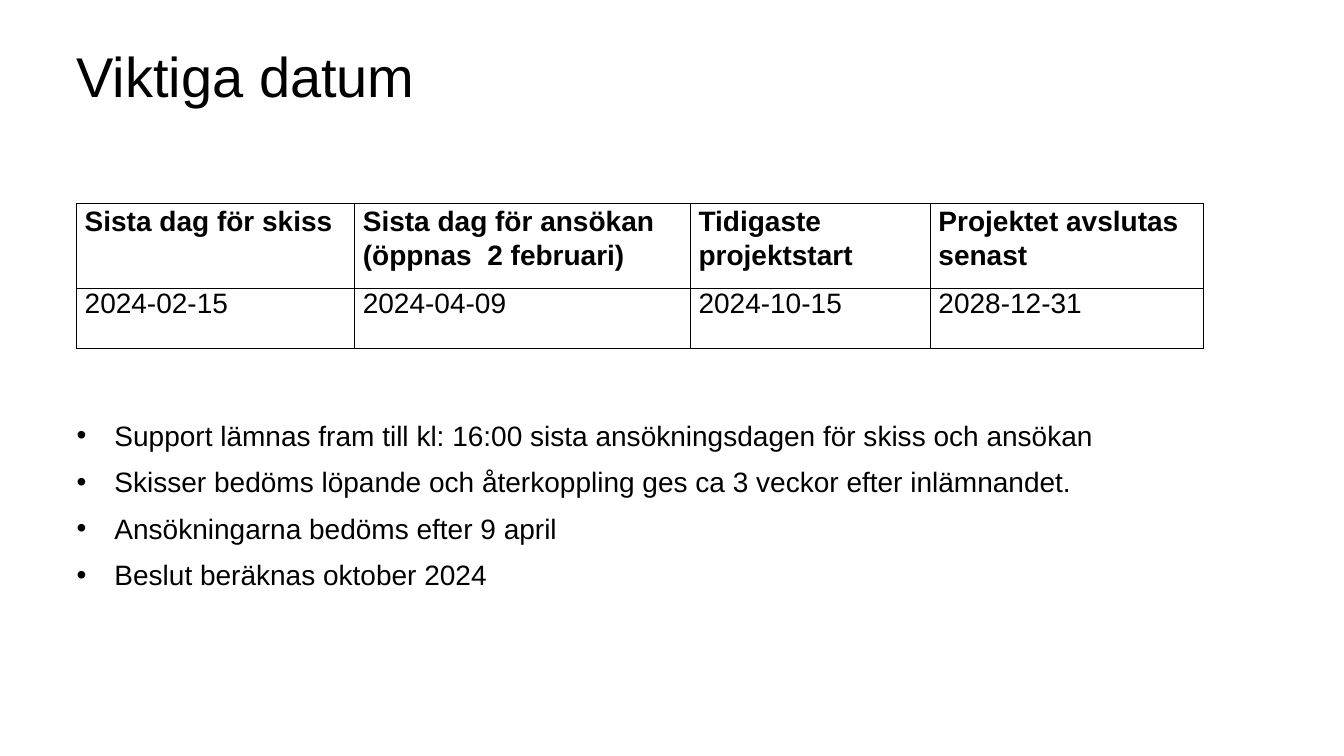
from lxml.etree import SubElement
from pptx import Presentation
from pptx.dml.color import RGBColor
from pptx.enum.text import MSO_ANCHOR, PP_ALIGN
from pptx.oxml.ns import qn
from pptx.util import Pt

TITLE = "Viktiga datum"
HEADERS = [
    "Sista dag för skiss",
    "Sista dag för ansökan\n(öppnas  2 februari)",
    "Tidigaste projektstart",
    "Projektet avslutas senast",
]
DATES = ["2024-02-15", "2024-04-09", "2024-10-15", "2028-12-31"]
BULLETS = [
    "Support lämnas fram till kl: 16:00 sista ansökningsdagen för skiss och ansökan",
    "Skisser bedöms löpande och återkoppling ges ca 3 veckor efter inlämnandet.",
    "Ansökningarna bedöms efter 9 april",
    "Beslut beräknas oktober 2024",
]

COLORS = {"text": "000000", "border": "000000", "background": "FFFFFF"}
FONT = "Arial"
LEFT, WIDTH = 54.7, 850.3
TITLE_TOP, TITLE_HEIGHT = 31.7, 90.7
TABLE_TOP = 145.4
COLUMN_WIDTHS = [198.7, 239.8, 171.4, 195.1]
ROW_HEIGHTS = [60.5, 43.2]
CELL_INDENT = 5.8
BULLETS_TOP, BULLETS_HEIGHT = 298.8, 153.4
BULLET_INDENT = 27


def set_font(paragraph, size, bold=False):
    paragraph.font.name = FONT
    paragraph.font.size = Pt(size)
    paragraph.font.bold = bold
    paragraph.font.color.rgb = RGBColor.from_string(COLORS["text"])


def prepare_frame(frame):
    """Wrap text from the top edge with no inner margins."""
    frame.word_wrap = True
    frame.vertical_anchor = MSO_ANCHOR.TOP
    frame.margin_left = frame.margin_right = 0
    frame.margin_top = frame.margin_bottom = 0


def add_borders(cell):
    properties = cell._tc.get_or_add_tcPr()
    for side in ("lnL", "lnR", "lnT", "lnB"):
        line = SubElement(properties, qn(f"a:{side}"), w=str(Pt(1)))
        fill = SubElement(line, qn("a:solidFill"))
        SubElement(fill, qn("a:srgbClr"), val=COLORS["border"])


def add_bullet(paragraph):
    properties = paragraph._p.get_or_add_pPr()
    properties.set("marL", str(Pt(BULLET_INDENT)))
    properties.set("indent", str(-Pt(BULLET_INDENT)))
    SubElement(properties, qn("a:buFont"), typeface=FONT)
    SubElement(properties, qn("a:buChar"), char="•")


def add_title(page):
    title = page.shapes.title
    title.left, title.top = Pt(LEFT), Pt(TITLE_TOP)
    title.width, title.height = Pt(WIDTH), Pt(TITLE_HEIGHT)
    prepare_frame(title.text_frame)
    para = title.text_frame.paragraphs[0]
    para.text = TITLE
    para.alignment = PP_ALIGN.LEFT
    para.line_spacing = Pt(46)
    set_font(para, 40)


def add_date_table(page):
    rows = [HEADERS, DATES]
    table = page.shapes.add_table(
        len(rows), len(HEADERS), Pt(LEFT), Pt(TABLE_TOP),
        Pt(sum(COLUMN_WIDTHS)), Pt(sum(ROW_HEIGHTS)),
    ).table
    table.horz_banding = False
    for column, width in zip(table.columns, COLUMN_WIDTHS):
        column.width = Pt(width)
    for row, height, texts in zip(table.rows, ROW_HEIGHTS, rows):
        row.height = Pt(height)
        is_header = texts is HEADERS
        for cell, text in zip(row.cells, texts):
            cell.margin_left = Pt(CELL_INDENT)
            cell.margin_right = cell.margin_top = cell.margin_bottom = 0
            add_borders(cell)
            cell.fill.background()
            para = cell.text_frame.paragraphs[0]
            para.text = text
            para.line_spacing = 1.08 if is_header else 1.0
            set_font(para, 20, bold=is_header)


def add_bullet_list(page):
    box = page.shapes.add_textbox(
        Pt(LEFT), Pt(BULLETS_TOP), Pt(WIDTH), Pt(BULLETS_HEIGHT))
    frame = box.text_frame
    prepare_frame(frame)
    for number, text in enumerate(BULLETS):
        para = frame.add_paragraph() if number else frame.paragraphs[0]
        para.text = text
        add_bullet(para)
        para.space_before = Pt(9.2 if number else 0)
        set_font(para, 20)


def main():
    deck = Presentation()
    deck.slide_width, deck.slide_height = Pt(960), Pt(540)
    page = deck.slides.add_slide(deck.slide_layouts[5])
    page.background.fill.solid()
    page.background.fill.fore_color.rgb = RGBColor.from_string(COLORS["background"])
    add_title(page)
    add_date_table(page)
    add_bullet_list(page)
    deck.save("out.pptx")


if __name__ == "__main__":
    main()
